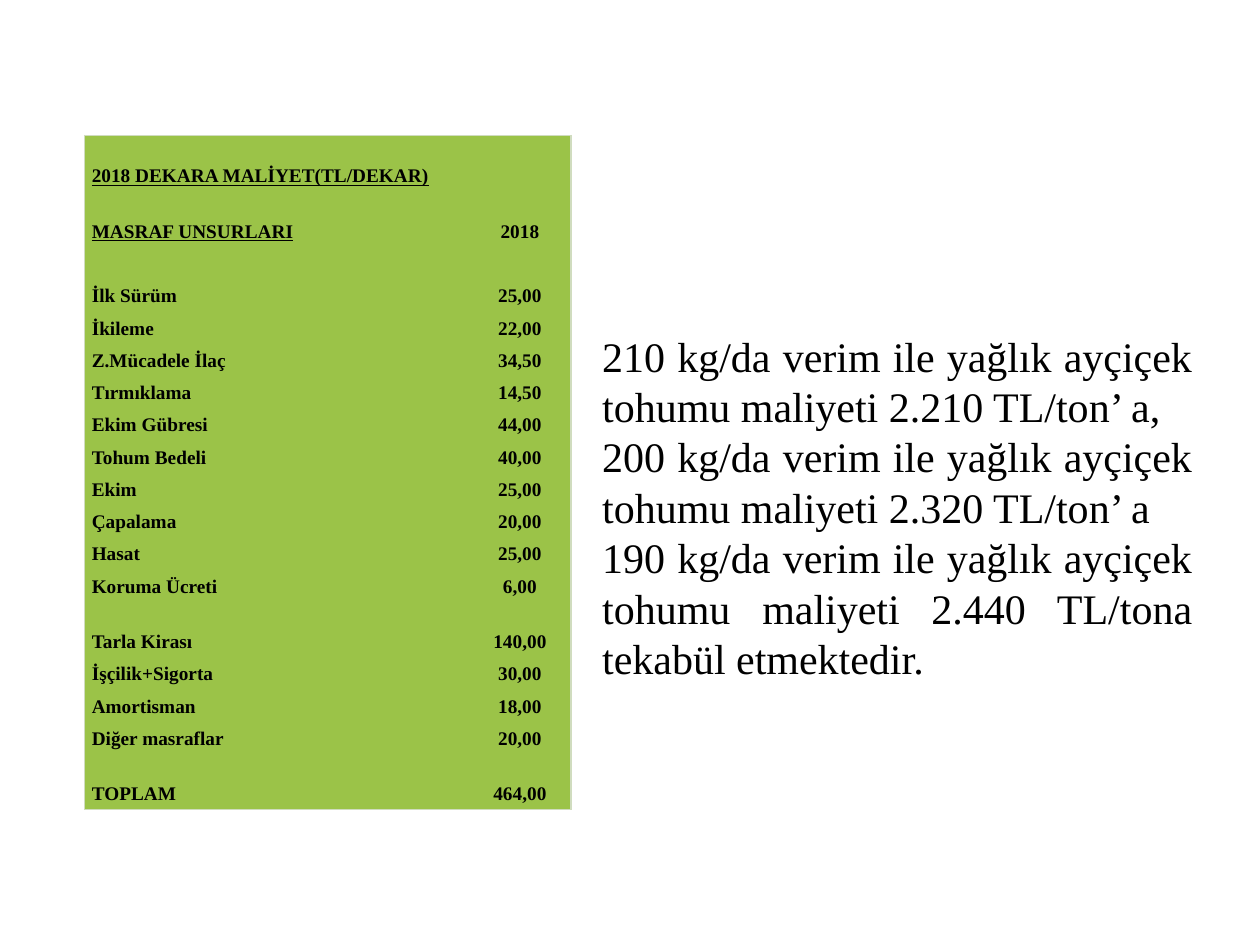
from lxml import etree
from pptx import Presentation
from pptx.dml.color import RGBColor
from pptx.enum.text import MSO_ANCHOR, MSO_AUTO_SIZE, PP_ALIGN
from pptx.oxml.ns import qn
from pptx.util import Cm, Pt

BOTTOM = MSO_ANCHOR.BOTTOM
GROW = MSO_AUTO_SIZE.SHAPE_TO_FIT_TEXT
LEFT, CENTER, JUST = PP_ALIGN.LEFT, PP_ALIGN.CENTER, PP_ALIGN.JUSTIFY
GREEN = RGBColor(0x9B, 0xC3, 0x48)
EDGE = RGBColor(0xD0, 0xDC, 0xBF)
BLACK = RGBColor(0, 0, 0)
FONT = "Times New Roman"

COSTS = [
    ("2018 DEKARA MALİYET(TL/DEKAR)", ""),
    ("MASRAF UNSURLARI", "2018"),
    ("", ""),
    ("İlk Sürüm", "25,00"),
    ("İkileme", "22,00"),
    ("Z.Mücadele İlaç", "34,50"),
    ("Tırmıklama", "14,50"),
    ("Ekim Gübresi", "44,00"),
    ("Tohum Bedeli", "40,00"),
    ("Ekim", "25,00"),
    ("Çapalama", "20,00"),
    ("Hasat", "25,00"),
    ("Koruma Ücreti", "6,00"),
    ("Tarla Kirası", "140,00"),
    ("İşçilik+Sigorta", "30,00"),
    ("Amortisman", "18,00"),
    ("Diğer masraflar", "20,00"),
    ("TOPLAM", "464,00"),
]
TALL = (0, 1, 13, 17)
WIDTHS = (4.78, 2.97, 2.06)
NOTES = [
    "210 kg/da verim ile yağlık ayçiçek tohumu maliyeti 2.210 TL/ton’ a,",
    "200 kg/da verim ile yağlık ayçiçek tohumu maliyeti 2.320 TL/ton’ a",
    "190 kg/da verim ile yağlık ayçiçek tohumu maliyeti 2.440 TL/tona tekabül etmektedir.",
]


def style(para, size, align):
    para.alignment = align
    for run in para.runs:
        run.font.name = FONT
        run.font.size = Pt(size)
        run.font.color.rgb = BLACK


def border(cell, side, shown):
    line = etree.SubElement(cell._tc.get_or_add_tcPr(), qn("a:ln" + side))
    if shown:
        line.set("w", str(Pt(0.75)))
        fill = etree.SubElement(line, qn("a:solidFill"))
        etree.SubElement(fill, qn("a:srgbClr")).set("val", str(EDGE))
    else:
        etree.SubElement(line, qn("a:noFill"))


prs = Presentation()
prs.slide_width, prs.slide_height = Cm(25.4), Cm(19.05)
slide = prs.slides.add_slide(prs.slide_layouts[6])

# Cost table
last = len(COSTS) - 1
frame = slide.shapes.add_table(len(COSTS), 3, Cm(1.7), Cm(2.73), Cm(9.81), Cm(13.58))
table = frame.table
for col, width in zip(table.columns, WIDTHS):
    col.width = Cm(width)

for r, (item, cost) in enumerate(COSTS):
    table.rows[r].height = Cm(1.12 if r in TALL else 0.65)
    for c, text in enumerate((item, "", cost)):
        cell = table.cell(r, c)
        edges = {"L": c == 0, "R": c == 2, "T": r == 0, "B": r == last}
        for side, shown in edges.items():
            border(cell, side, shown)
        cell.fill.solid()
        cell.fill.fore_color.rgb = GREEN
        cell.vertical_anchor = BOTTOM
        cell.margin_left = cell.margin_right = Cm(0.15)
        cell.margin_top = cell.margin_bottom = Cm(0.08)
        para = cell.text_frame.paragraphs[0]
        if text:
            para.text = text
            style(para, 11, CENTER if c == 2 else LEFT)
            para.runs[0].font.bold = True
            if r < 2 and c == 0:
                para.runs[0].font.underline = True
        else:
            # Keep empty cells from stretching their row
            etree.SubElement(para._p, qn("a:endParaRPr")).set("sz", "1100")
table.cell(0, 0).merge(table.cell(0, 1))

# Cost per ton
box = slide.shapes.add_textbox(Cm(11.89), Cm(6.53), Cm(12.4), Cm(7.44))
body = box.text_frame
body.word_wrap = True
body.auto_size = GROW
body.text = "\n".join(NOTES)
for para in body.paragraphs:
    style(para, 24, JUST)

prs.save("out.pptx")
